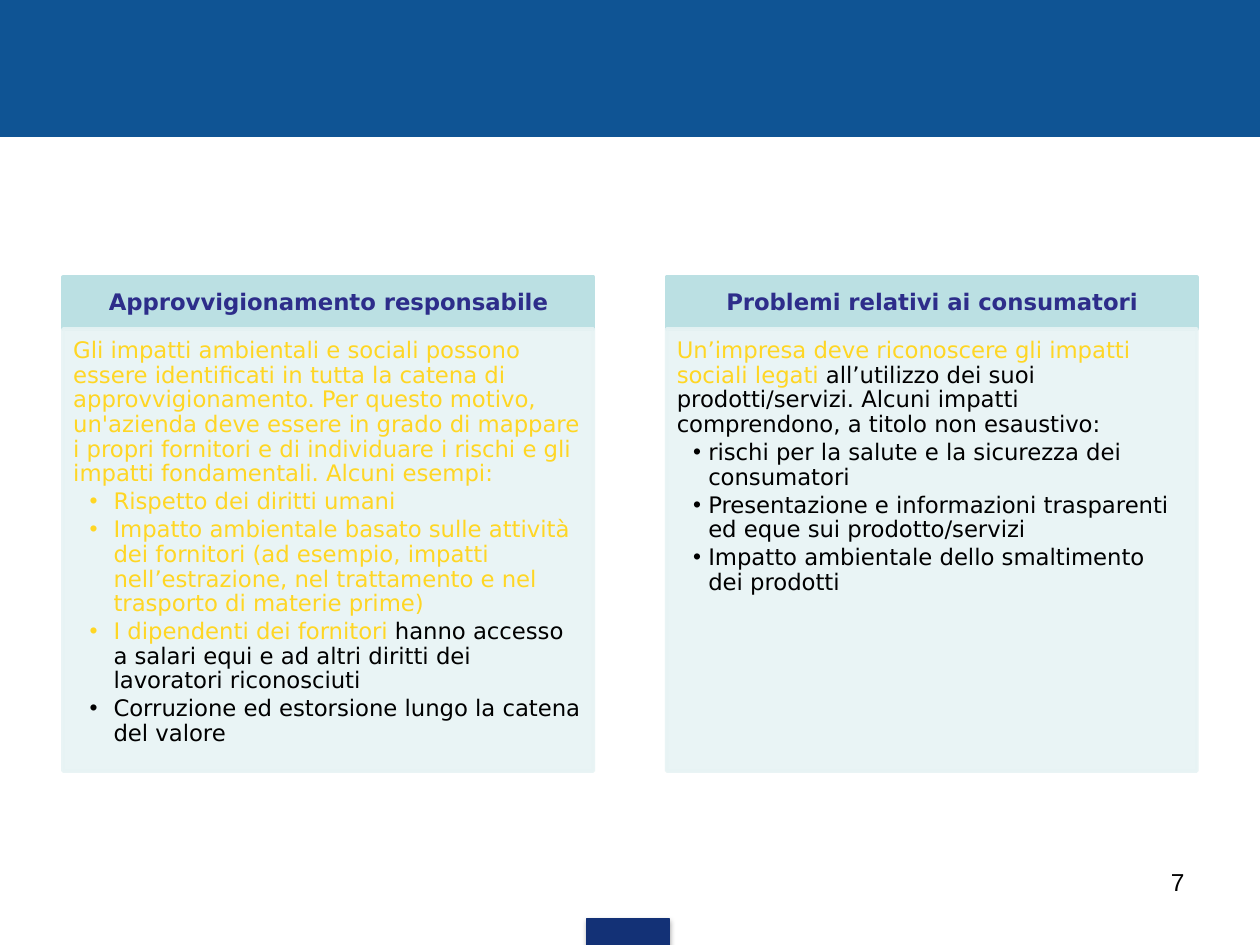
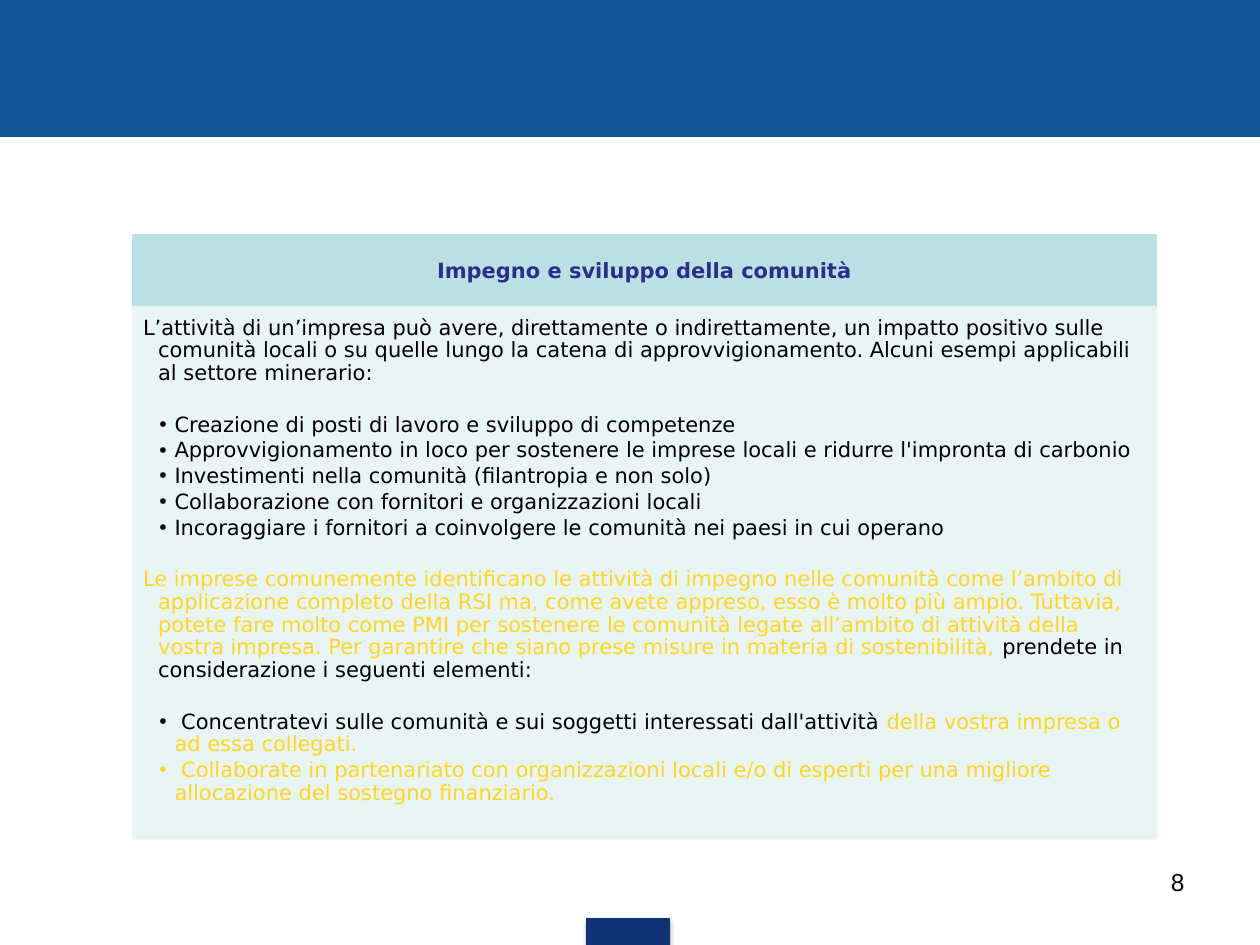
from dataclasses import dataclass

from lxml import etree
from pptx import Presentation
from pptx.dml.color import RGBColor
from pptx.enum.shapes import MSO_SHAPE
from pptx.enum.text import MSO_ANCHOR, MSO_AUTO_SIZE, PP_ALIGN
from pptx.oxml.ns import qn
from pptx.util import Emu, Inches, Pt

RECTANGLE = MSO_SHAPE.RECTANGLE
CENTER, RIGHT = PP_ALIGN.CENTER, PP_ALIGN.RIGHT
TOP, MIDDLE = MSO_ANCHOR.TOP, MSO_ANCHOR.MIDDLE
NO_AUTOFIT = MSO_AUTO_SIZE.NONE

COLOURS = {
    "band": "0F5494",
    "tab": "133176",
    "heading fill": "BBE0E3",
    "body fill": "E7F3F4",
    "heading text": "2D2D8A",
    "yellow": "FFD624",
    "black": "000000",
}
TEXT_FONT, NUMBER_FONT = "DejaVu Sans", "Arial"
SLIDE_WIDTH, SLIDE_HEIGHT = Inches(10), Inches(7.5)
GRID_COLUMNS, GRID_ROWS = 100, 75
TITLE_AND_CONTENT, COMPARISON = 1, 4
PANEL_OPACITY = 90


@dataclass(frozen=True)
class Area:
    """A rectangle in grid columns and rows."""
    left: float
    top: float
    width: float
    height: float

    def lengths(self) -> tuple[Emu, Emu, Emu, Emu]:
        column, row = SLIDE_WIDTH / GRID_COLUMNS, SLIDE_HEIGHT / GRID_ROWS
        return (Emu(round(self.left * column)), Emu(round(self.top * row)),
                Emu(round(self.width * column)), Emu(round(self.height * row)))


@dataclass(frozen=True)
class Style:
    margin: float = 0
    indent: float = 0
    bullet: bool = False


@dataclass(frozen=True)
class Item:
    """A paragraph: its yellow or black pieces, in reading order."""
    style: Style
    pieces: tuple[tuple[str, str], ...]
    after_gap: bool = False


@dataclass(frozen=True)
class Panel:
    heading: str
    heading_area: Area
    body_height: float
    size: int
    items: tuple[Item, ...]

    def body_area(self) -> Area:
        area = self.heading_area
        return Area(area.left, area.top + area.height, area.width, self.body_height)


PLAIN = Style()
HANGING = Style(0.12, -0.12)
WIDE_BULLET = Style(0.32, -0.19, True)
BULLET = Style(0.25, -0.12, True)


def yellow(text: str) -> tuple[str, str]:
    return text, "yellow"


def black(text: str) -> tuple[str, str]:
    return text, "black"


def item(style: Style, *pieces: tuple[str, str], after_gap: bool = False) -> Item:
    return Item(style, pieces, after_gap)


PAIR_LEFT, PAIR_WIDTH = 5, 42.1
PAIR_STEP = GRID_COLUMNS - 2 * PAIR_LEFT - PAIR_WIDTH


def pair_panel(position: int, heading: str, *items: Item) -> Panel:
    area = Area(PAIR_LEFT + position * PAIR_STEP, 22, PAIR_WIDTH, 4.1)
    return Panel(heading, area, 35.1, 13, items)


SUPPLY_PANEL = pair_panel(
    0, "Approvvigionamento responsabile",
    item(PLAIN, yellow(
        "Gli impatti ambientali e sociali possono essere identificati in tutta la catena di "
        "approvvigionamento. Per questo motivo, un'azienda deve essere in grado di mappare i "
        "propri fornitori e di individuare i rischi e gli impatti fondamentali. Alcuni esempi:")),
    item(WIDE_BULLET, yellow("Rispetto dei diritti umani")),
    item(WIDE_BULLET, yellow(
        "Impatto ambientale basato sulle attività dei fornitori (ad esempio, impatti "
        "nell’estrazione, nel trattamento e nel trasporto di materie prime)")),
    item(WIDE_BULLET, yellow("I dipendenti dei fornitori "), black(
        "hanno accesso a salari equi e ad altri diritti dei lavoratori riconosciuti")),
    item(WIDE_BULLET, black("Corruzione ed estorsione lungo la catena del valore")),
)
CONSUMER_PANEL = pair_panel(
    1, "Problemi relativi ai consumatori",
    item(PLAIN, yellow("Un’impresa deve riconoscere gli impatti sociali legati "), black(
        "all’utilizzo dei suoi prodotti/servizi. Alcuni impatti comprendono, a titolo non "
        "esaustivo:")),
    item(BULLET, black("rischi per la salute e la sicurezza dei consumatori")),
    item(BULLET, black("Presentazione e informazioni trasparenti ed eque sui prodotto/servizi")),
    item(BULLET, black("Impatto ambientale dello smaltimento dei prodotti")),
)
COMMUNITY_PANEL = Panel(
    "Impegno e sviluppo della comunità", Area(10.6, 18.7, 81.1, 5.7), 42.1, 12, (
        item(HANGING, black(
            "L’attività di un’impresa può avere, direttamente o indirettamente, un impatto "
            "positivo sulle comunità locali o su quelle lungo la catena di approvvigionamento. "
            "Alcuni esempi applicabili al settore minerario:")),
        item(BULLET, black("Creazione di posti di lavoro e sviluppo di competenze"),
             after_gap=True),
        item(BULLET, black(
            "Approvvigionamento in loco per sostenere le imprese locali e ridurre l'impronta "
            "di carbonio")),
        item(BULLET, black("Investimenti nella comunità (filantropia e non solo)")),
        item(BULLET, black("Collaborazione con fornitori e organizzazioni locali")),
        item(BULLET, black(
            "Incoraggiare i fornitori a coinvolgere le comunità nei paesi in cui operano")),
        item(HANGING, yellow(
            "Le imprese comunemente identificano le attività di impegno nelle comunità come "
            "l’ambito di applicazione completo della RSI ma, come avete appreso, esso è molto "
            "più ampio. Tuttavia, potete fare molto come PMI per sostenere le comunità legate "
            "all’ambito di attività della vostra impresa. Per garantire che siano prese misure "
            "in materia di sostenibilità, "),
            black("prendete in considerazione i seguenti elementi:"), after_gap=True),
        item(BULLET, black(
            " Concentratevi sulle comunità e sui soggetti interessati dall'attività "),
            yellow("della vostra impresa o ad essa collegati."), after_gap=True),
        item(BULLET, yellow(
            " Collaborate in partenariato con organizzazioni locali e/o di esperti per una "
            "migliore allocazione del sostegno finanziario.")),
    ))


def colour(name: str) -> RGBColor:
    return RGBColor.from_string(COLOURS[name])


def paint(shape, name: str, line_width: float) -> None:
    shape.fill.solid()
    shape.fill.fore_color.rgb = colour(name)
    shape.line.color.rgb = colour(name)
    shape.line.width = Pt(line_width)


def set_opacity(shape, percent: int) -> None:
    """Make the fill and the line of a painted shape slightly transparent."""
    for value in shape.element.spPr.iter(qn("a:srgbClr")):
        etree.SubElement(value, qn("a:alpha"), val=str(percent * 1000))


def add_shadow(shape) -> None:
    effects = shape.element.spPr.find(qn("a:effectLst"))
    shadow = etree.SubElement(effects, qn("a:outerShdw"), blurRad=str(Pt(3.1)),
                              dist=str(Pt(1.8)), dir="5400000", rotWithShape="0")
    value = etree.SubElement(shadow, qn("a:srgbClr"), val=COLOURS["black"])
    etree.SubElement(value, qn("a:alpha"), val="35000")


def place(shape, area: Area) -> None:
    shape.left, shape.top, shape.width, shape.height = area.lengths()


def format_run(run, size: int, name: str, font: str = TEXT_FONT, bold: bool = False) -> None:
    run.font.name, run.font.size, run.font.bold = font, Pt(size), bold
    run.font.color.rgb = colour(name)


def prepare_frame(shape, anchor, insets: tuple[float, float, float, float]):
    """Fix the text frame; insets run left, top, right, bottom in inches."""
    frame = shape.text_frame
    frame.word_wrap, frame.auto_size, frame.vertical_anchor = True, NO_AUTOFIT, anchor
    (frame.margin_left, frame.margin_top,
     frame.margin_right, frame.margin_bottom) = map(Inches, insets)
    return frame


def fill_heading(shape, panel: Panel) -> None:
    place(shape, panel.heading_area)
    paint(shape, "heading fill", 2)
    frame = prepare_frame(shape, MIDDLE, (0.1, 0.06, 0.1, 0.06))
    frame.text = panel.heading
    paragraph = frame.paragraphs[0]
    paragraph.alignment, paragraph.line_spacing = CENTER, 0.9
    paragraph.space_before = paragraph.space_after = Pt(0)
    format_run(paragraph.runs[0], panel.size, "heading text", bold=True)


def write_item(paragraph, entry: Item, size: int) -> None:
    style = entry.style
    paragraph.level = int(style.bullet)
    properties = paragraph._p.get_or_add_pPr()
    properties.set("marL", str(Inches(style.margin)))
    properties.set("indent", str(Inches(style.indent)))
    if style.bullet:
        etree.SubElement(properties, qn("a:buChar"), char="•")
    else:
        etree.SubElement(properties, qn("a:buNone"))
    paragraph.line_spacing = 0.9
    paragraph.space_before = Pt(size * 1.23 if entry.after_gap else 0)
    paragraph.space_after = Pt(size * 0.15)
    for text, name in entry.pieces:
        run = paragraph.add_run()
        run.text = text
        format_run(run, size, name)


def fill_body(shape, panel: Panel) -> None:
    place(shape, panel.body_area())
    paint(shape, "body fill", 2)
    set_opacity(shape, PANEL_OPACITY)
    inset = panel.size / 160
    frame = prepare_frame(shape, TOP, (inset, inset, 0.1, 0.11))
    for position, entry in enumerate(panel.items):
        paragraph = frame.add_paragraph() if position else frame.paragraphs[0]
        write_item(paragraph, entry, panel.size)


def add_rectangle(slide, area: Area, name: str):
    shape = slide.shapes.add_shape(RECTANGLE, *area.lengths())
    shape.shadow.inherit = False
    paint(shape, name, 0.75)
    return shape


def add_frame(slide, number: int) -> None:
    """Add the top band, the bottom tab and the page number."""
    add_rectangle(slide, Area(0, 0, GRID_COLUMNS, 10.8), "band")
    add_shadow(add_rectangle(slide, Area(46.6, 72.9, 6.5, 2.1), "tab"))
    box = slide.shapes.add_textbox(*Area(71.7, 68.3, 23.3, 5.2).lengths())
    frame = prepare_frame(box, TOP, (0.1, 0.05, 0.1, 0.05))
    frame.text = str(number)
    frame.paragraphs[0].alignment = RIGHT
    format_run(frame.paragraphs[0].runs[0], 14, "black", NUMBER_FONT)


def add_panel_slide(presentation, layout: int, number: int, panels: tuple[Panel, ...]) -> None:
    slide = presentation.slides.add_slide(presentation.slide_layouts[layout])
    placeholders = list(slide.placeholders)
    if layout == COMPARISON:
        title = placeholders.pop(0).element
        title.getparent().remove(title)
    for panel, heading, body in zip(panels, placeholders[::2], placeholders[1::2]):
        fill_heading(heading, panel)
        fill_body(body, panel)
    add_frame(slide, number)


def main() -> None:
    presentation = Presentation()
    presentation.slide_width, presentation.slide_height = SLIDE_WIDTH, SLIDE_HEIGHT
    add_panel_slide(presentation, COMPARISON, 7, (SUPPLY_PANEL, CONSUMER_PANEL))
    add_panel_slide(presentation, TITLE_AND_CONTENT, 8, (COMMUNITY_PANEL,))
    presentation.save("out.pptx")


if __name__ == "__main__":
    main()
